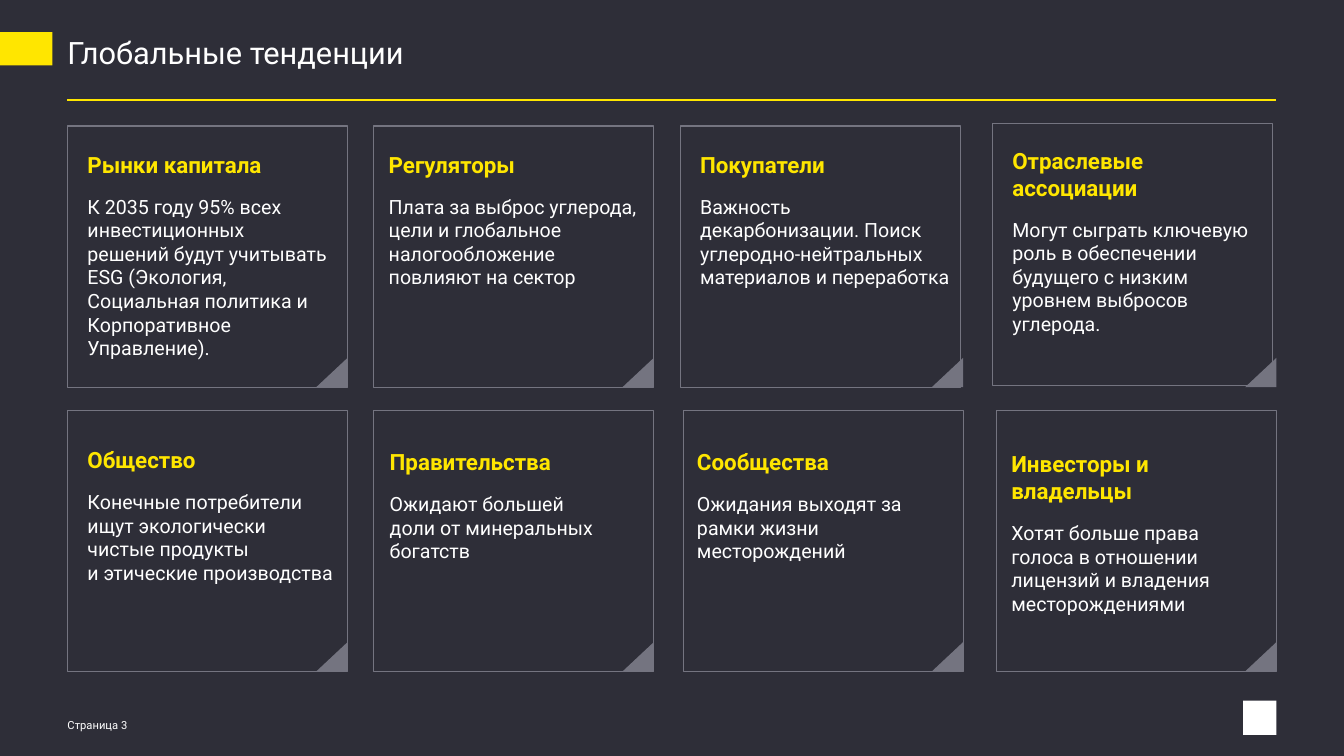
from dataclasses import dataclass

from pptx import Presentation, util as u
from pptx.dml.color import RGBColor
from pptx.enum import shapes, text
from pptx.oxml.ns import qn
from lxml import etree

# Content: heading, body paragraphs, frame shift (x, y), text offset (x, y) and width
TITLE = "Глобальные тенденции"
FOOTER = "Страница 3"
CARDS = [
    [
        ("Рынки капитала",
         ["К 2035 году 95% всех инвестиционных решений будут учитывать ESG "
          "(Экология, Социальная политика и Корпоративное Управление)."],
         (0, 0), (0.1, 0.2), 2.6),
        ("Регуляторы",
         ["Плата за выброс углерода, цели и глобальное налогообложение "
          "повлияют на сектор"],
         (0, 0), (0.05, 0.2), 2.68),
        ("Покупатели",
         ["Важность декарбонизации. Поиск углеродно-нейтральных материалов "
          "и переработка"],
         (-0.03, 0), (0.07, 0.2), 2.69),
        ("Отраслевые ассоциации",
         ["Могут сыграть ключевую роль в обеспечении будущего с низким "
          "уровнем выбросов углерода."],
         (-0.04, -0.02), (0.06, 0.16), 2.68),
    ],
    [
        ("Общество",
         ["Конечные потребители ищут экологически чистые продукты",
          "и этические производства"],
         (0, 0), (0.1, 0.31), 2.66),
        ("Правительства",
         ["Ожидают большей доли от минеральных богатств"],
         (0, 0), (0.06, 0.33), 2.3),
        ("Сообщества",
         ["Ожидания выходят за рамки жизни месторождений"],
         (0, 0), (0.04, 0.33), 2.54),
        ("Инвесторы и владельцы",
         ["Хотят больше права голоса в отношении лицензий и владения "
          "месторождениями"],
         (0, 0), (0.05, 0.35), 2.48),
    ],
]

# Grid, in inches
WIDTH, HEIGHT = 13.34, 7.5
MARGIN = 0.67
COLUMNS = (MARGIN, 3.71, 6.78, 9.89)
ROWS = (1.25, 4.07)
CARD_WIDTH, CARD_HEIGHT = 2.78, 2.59
CORNER_WIDTH, CORNER_HEIGHT = 0.31, 0.29
RIGHT = WIDTH - MARGIN


@dataclass(frozen=True)
class Theme:
    font: str = "Roboto"
    background: str = "2E2E38"
    accent: str = "FFE600"
    body: str = "FFFFFF"
    frame: str = "747480"
    title_size: int = 22
    heading_size: int = 16
    body_size: int = 14
    footer_size: int = 8


theme = Theme()
color = RGBColor.from_string


def add_block(slide, kind, left, top, width, height, fill=None, line=None):
    shape = slide.shapes.add_shape(
        kind, *(u.Inches(value) for value in (left, top, width, height)))
    shape.shadow.inherit = False
    if fill:
        shape.fill.solid()
        shape.fill.fore_color.rgb = color(fill)
    else:
        shape.fill.background()
    if line:
        shape.line.color.rgb = color(line)
        shape.line.width = u.Pt(0.75)
    else:
        shape.line.fill.background()
    return shape


def add_text(slide, left, top, width, height, lines, insets=(0.1, 0.05, 0.1, 0.05)):
    """Each line is (words, size, colour, bold, space after, line spacing)."""
    box = slide.shapes.add_textbox(
        *(u.Inches(value) for value in (left, top, width, height)))
    frame = box.text_frame
    frame.word_wrap = True
    frame.vertical_anchor = text.MSO_ANCHOR.TOP
    (frame.margin_left, frame.margin_top,
     frame.margin_right, frame.margin_bottom) = map(u.Inches, insets)
    for index, (words, size, shade, bold, after, spacing) in enumerate(lines):
        paragraph = frame.add_paragraph() if index else frame.paragraphs[0]
        paragraph.space_after = u.Pt(after)
        paragraph.line_spacing = spacing
        run = paragraph.add_run()
        run.text = words
        run.font.name = theme.font
        run.font.size = u.Pt(size)
        run.font.bold = bold
        run.font.color.rgb = color(shade)


def add_card(slide, left, top, card):
    heading, body, (shift_x, shift_y), (text_x, text_y), text_width = card
    add_block(slide, shapes.MSO_SHAPE.RECTANGLE, left + shift_x, top + shift_y,
              CARD_WIDTH, CARD_HEIGHT, line=theme.frame)
    corner = add_block(slide, shapes.MSO_SHAPE.RIGHT_TRIANGLE,
                       left + CARD_WIDTH - CORNER_WIDTH,
                       top + CARD_HEIGHT - CORNER_HEIGHT,
                       CORNER_WIDTH, CORNER_HEIGHT, fill=theme.frame)
    corner._element.spPr.find(qn("a:xfrm")).set("flipH", "1")
    lines = [(heading, theme.heading_size, theme.accent, True, 12, 1.0)]
    lines += [(words, theme.body_size, theme.body, False, 0, 1.0) for words in body]
    add_text(slide, left + text_x, top + text_y, text_width,
             CARD_HEIGHT - text_y - 0.1, lines)


def main():
    presentation = Presentation()
    presentation.slide_width = u.Inches(WIDTH)
    presentation.slide_height = u.Inches(HEIGHT)
    slide = presentation.slides.add_slide(presentation.slide_layouts[6])
    slide.background.fill.solid()
    slide.background.fill.fore_color.rgb = color(theme.background)

    # Header: tab, title and rule
    add_block(slide, shapes.MSO_SHAPE.RECTANGLE, 0, 0.32, 0.52, 0.33, fill=theme.accent)
    add_text(slide, MARGIN, 0.39, RIGHT - MARGIN, 0.46,
             [(TITLE, theme.title_size, theme.body, False, 0, 0.85)], (0, 0, 0, 0))
    rule = slide.shapes.add_connector(
        shapes.MSO_CONNECTOR.STRAIGHT,
        *(u.Inches(value) for value in (MARGIN, 0.99, RIGHT, 0.99)))
    rule.line.color.rgb = color(theme.accent)
    rule.line.width = u.Pt(1.5)
    etree.SubElement(rule._element.spPr, qn("a:effectLst"))

    # Cards
    for top, row in zip(ROWS, CARDS):
        for left, card in zip(COLUMNS, row):
            add_card(slide, left, top, card)

    # Footer: page number and plain mark
    add_text(slide, MARGIN, 7.08, 0.87, 0.22,
             [(FOOTER, theme.footer_size, theme.body, False, 0, 1.0)],
             (0, 0.05, 0.1, 0.05))
    add_block(slide, shapes.MSO_SHAPE.RECTANGLE, RIGHT - 0.33, 6.95, 0.33, 0.34,
              fill=theme.body)

    presentation.save("out.pptx")


if __name__ == "__main__":
    main()
